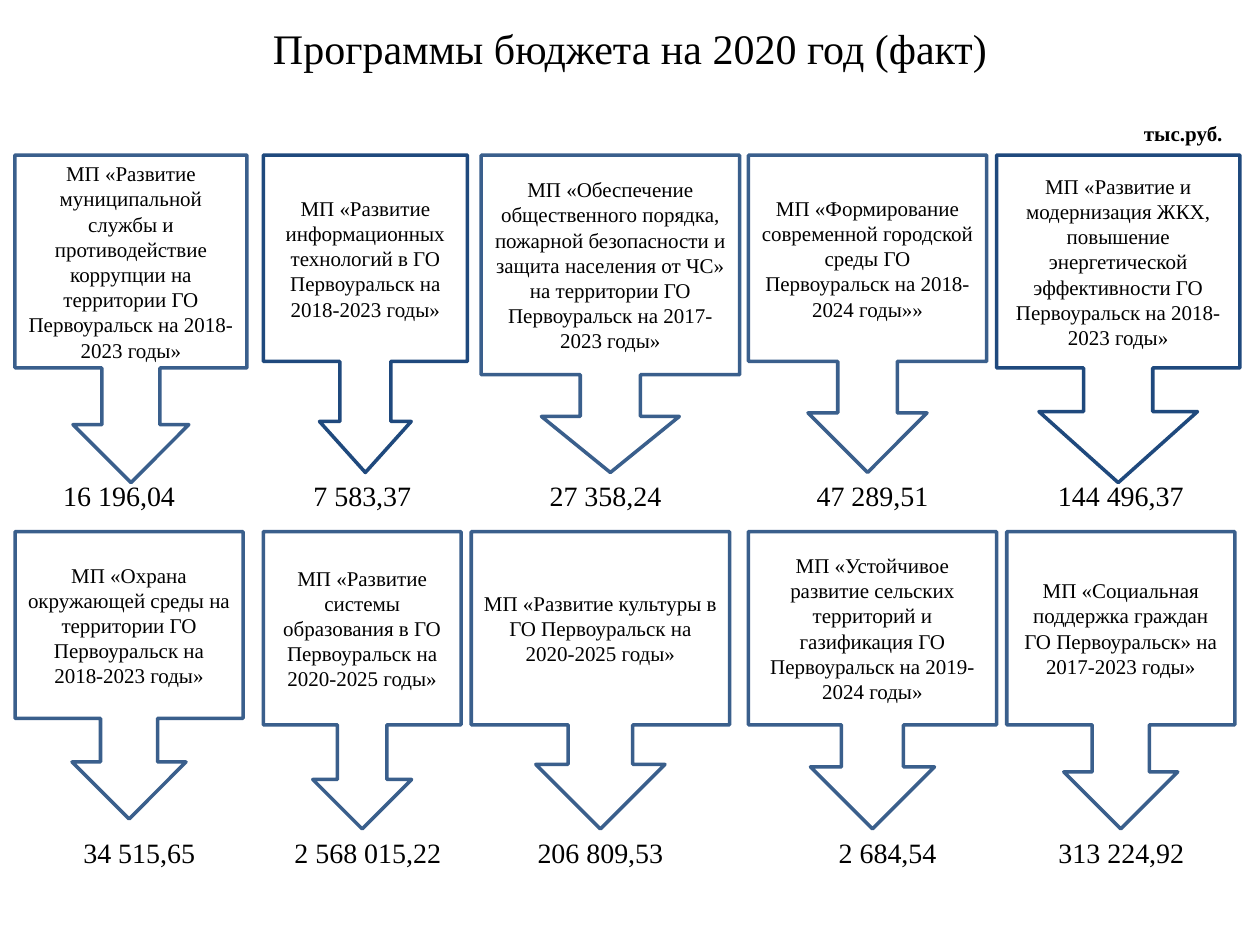
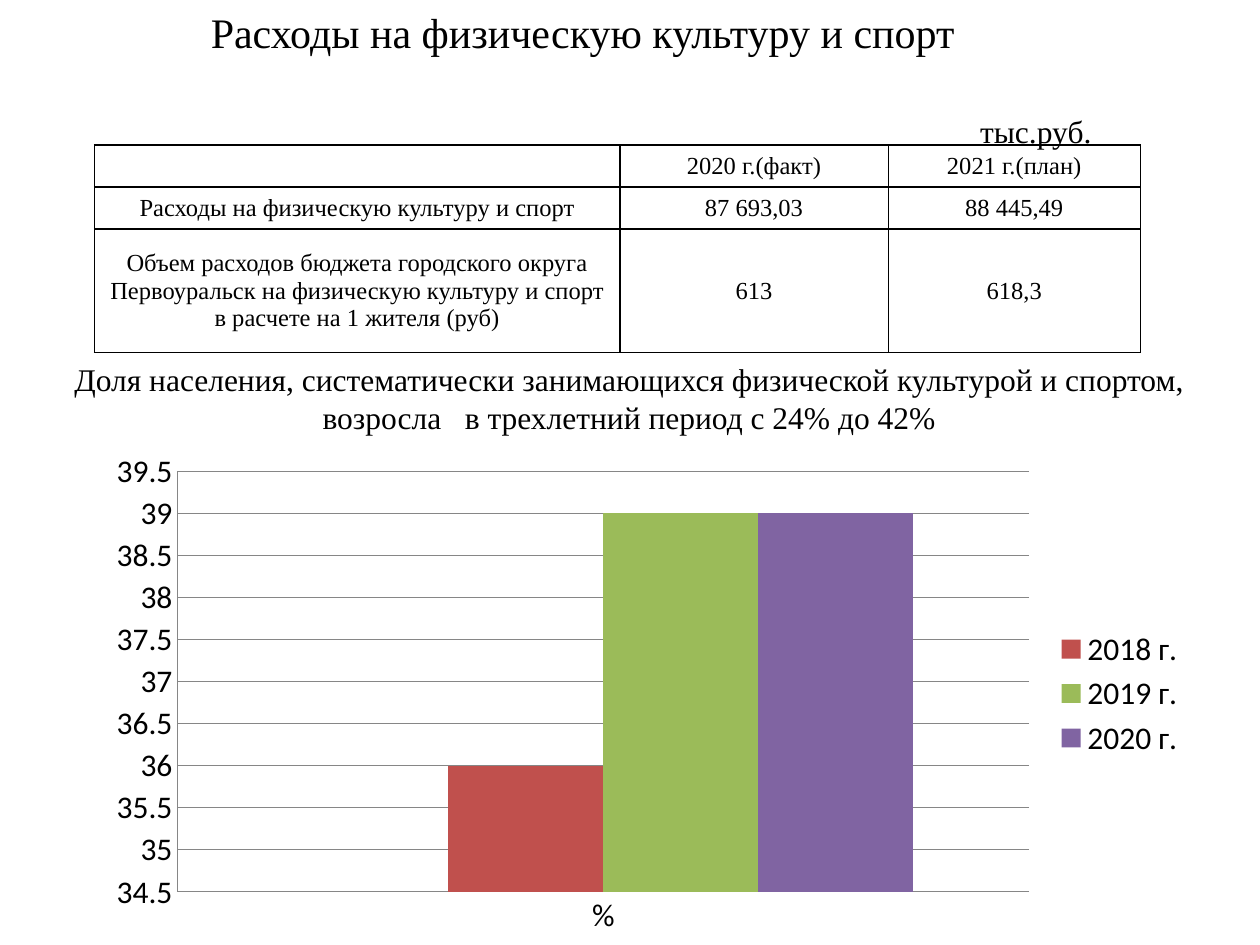
from dataclasses import dataclass

from lxml.etree import SubElement
from pptx import Presentation
from pptx.chart.data import CategoryChartData
from pptx.dml.color import RGBColor as RGB
from pptx.enum.chart import XL_CHART_TYPE as CT, XL_LEGEND_POSITION as LP, XL_TICK_MARK as TM
from pptx.enum.shapes import MSO_SHAPE as SHAPE
from pptx.enum.text import MSO_ANCHOR as ANCHOR, MSO_AUTO_SIZE as AUTO, PP_ALIGN as AL
from pptx.oxml.ns import qn
from pptx.util import Pt


@dataclass(frozen=True)
class Theme:
    font: str = "Times New Roman"
    chart_font: str = "Calibri"
    ink: str = "000000"
    outline: str = "3A5F8C"
    dark_outline: str = "1F497D"
    grid: str = "868686"
    series: tuple = ("4F81BD", "C0504D", "9BBB59", "8064A2")
    title: int = 24
    lead: int = 18
    amount: int = 16
    cell: int = 14
    label: int = 12
    border: int = 1
    callout_line: int = 2


T = Theme()

DEFAULT_ADJ = (0.25, 0.25, 0.25, 0.65)

PROGRAM_ROWS = [
    {"top": 88.6, "amount_top": 270, "programs": [
        ("МП «Развитие муниципальной службы и противодействие коррупции на территории ГО "
         "Первоуральск на 2018-2023 годы»",
         (8.6, 132.5, 187.2), DEFAULT_ADJ, T.outline, "16 196,04", (0, 136.1)),
        ("МП «Развитие информационных технологий в ГО Первоуральск на 2018-2023 годы»",
         (150.5, 116.6, 181.4), (0.25, 0.225, 0.25, 0.65), T.dark_outline,
         "7 583,37", (139, 136.1)),
        ("МП «Обеспечение общественного порядка, пожарной безопасности и защита населения "
         "от ЧС» на территории ГО Первоуральск на 2017-2023 годы»",
         (275, 147.6, 181.4), (0.233, 0.267, 0.217, 0.692), T.outline,
         "27 358,24", (280.8, 130.3)),
        ("МП «Формирование современной городской среды ГО Первоуральск на 2018-2024 годы»»",
         (427.7, 136.1, 181.4), DEFAULT_ADJ, T.outline, "47 289,51", (433.4, 130.3)),
        ("МП «Развитие и модернизация ЖКХ, повышение энергетической эффективности ГО "
         "Первоуральск на 2018-2023 годы»",
         (569.5, 139, 187.2), (0.284, 0.326, 0.292, 0.65), T.dark_outline,
         "144 496,37", (575.3, 130.3)),
    ]},
    {"top": 303.8, "amount_top": 473.8, "programs": [
        ("МП «Охрана окружающей среды на территории ГО Первоуральск на 2018-2023 годы»",
         (8.6, 130.3, 164.2), DEFAULT_ADJ, T.outline, "34 515,65", (14.4, 130.3)),
        ("МП «Развитие системы образования в ГО Первоуральск на 2020-2025 годы»",
         (150.5, 113, 169.9), DEFAULT_ADJ, T.outline, "2 568 015,22", (156.2, 108)),
        ("МП «Развитие культуры в ГО Первоуральск на 2020-2025 годы»",
         (269.3, 147.6, 169.9), DEFAULT_ADJ, T.outline, "206 809,53", (286.6, 113)),
        ("МП «Устойчивое развитие сельских территорий и газификация ГО Первоуральск на "
         "2019-2024 годы»",
         (427.7, 141.8, 169.9), DEFAULT_ADJ, T.outline, "2 684,54", (450.7, 113)),
        ("МП «Социальная поддержка граждан ГО Первоуральск» на 2017-2023 годы»",
         (575.3, 130.3, 169.9), DEFAULT_ADJ, T.outline, "313 224,92", (586.8, 108)),
    ]},
]

SPORT_COSTS = [
    ("", "2020 г.(факт)", "2021 г.(план)"),
    ("Расходы на физическую культуру и спорт", "87 693,03", "88 445,49"),
    ("Объем расходов бюджета городского округа Первоуральск на физическую культуру и спорт "
     "в расчете на 1 жителя (руб)", "613", "618,3"),
]

SPORT_SHARE = [("Series 1", None), ("2018 г.", 36), ("2019 г.", 39), ("2020 г.", 39)]


def apply(obj, **values):
    for name, value in values.items():
        setattr(obj, name, value)


def box(*lengths):
    return [Pt(v) for v in lengths]


def style_font(font, size, name=T.font, bold=False):
    apply(font, name=name, size=Pt(size), bold=bold)
    font.color.rgb = RGB.from_string(T.ink)


def write(tf, text, size, align=AL.CENTER, bold=False):
    p = tf.paragraphs[0]
    p.alignment = align
    if text:
        r = p.add_run()
        r.text = text
        style_font(r.font, size, bold=bold)
    else:
        SubElement(p._p, qn("a:endParaRPr"), sz=str(size * 100))


def add_text(s, text, at, size, **options):
    tf = s.shapes.add_textbox(*box(*at)).text_frame
    apply(tf, word_wrap=True, auto_size=AUTO.SHAPE_TO_FIT_TEXT)
    write(tf, text, size, **options)


def add_callout(s, text, at, adjustments, color):
    sp = s.shapes.add_shape(SHAPE.DOWN_ARROW_CALLOUT, *box(*at))
    for i, value in enumerate(adjustments):
        sp.adjustments[i] = value
    sp.shadow.inherit = False
    sp.fill.background()
    sp.line.color.rgb = RGB.from_string(color)
    sp.line.width = Pt(T.callout_line)
    apply(sp.text_frame, word_wrap=True, vertical_anchor=ANCHOR.MIDDLE)
    write(sp.text_frame, text, T.label)


def add_borders(cell):
    tc_pr = cell._tc.get_or_add_tcPr()
    for i, side in enumerate(("lnL", "lnR", "lnT", "lnB")):
        ln = tc_pr.makeelement(qn(f"a:{side}"), {"w": str(Pt(T.border))})
        fill = SubElement(ln, qn("a:solidFill"))
        SubElement(fill, qn("a:srgbClr"), val=T.ink)
        tc_pr.insert(i, ln)


def add_table(s, rows, at, widths, heights):
    table = s.shapes.add_table(len(rows), len(widths), *box(*at)).table
    apply(table, first_row=False, horz_banding=False)
    for column, width in zip(table.columns, widths):
        column.width = Pt(width)
    for row, height, texts in zip(table.rows, heights, rows):
        row.height = Pt(height)
        for cell, text in zip(row.cells, texts):
            cell.fill.background()
            cell.vertical_anchor = ANCHOR.MIDDLE
            write(cell.text_frame, text, T.cell)
            add_borders(cell)


def hide_legend_entry(legend, index):
    entry = legend._element.makeelement(qn("c:legendEntry"))
    SubElement(entry, qn("c:idx"), val=str(index))
    SubElement(entry, qn("c:delete"), val="1")
    legend._element.find(qn("c:legendPos")).addnext(entry)


def add_column_chart(s, category, series, at):
    data = CategoryChartData()
    data.categories = [category]
    for name, value in series:
        data.add_series(name, [value])
    chart = s.shapes.add_chart(CT.COLUMN_CLUSTERED, *box(*at), data).chart
    apply(chart, has_title=False, has_legend=True)
    style_font(chart.font, T.lead, T.chart_font)
    apply(chart.legend, position=LP.RIGHT, include_in_layout=False)
    hide_legend_entry(chart.legend, 0)

    plot = chart.plots[0]
    apply(plot, gap_width=150, vary_by_categories=False)
    for ser, color in zip(plot.series, T.series):
        ser.invert_if_negative = False
        ser.format.fill.solid()
        ser.format.fill.fore_color.rgb = RGB.from_string(color)

    values = chart.value_axis
    apply(values, minimum_scale=34.5, maximum_scale=39.5, major_unit=0.5,
          has_major_gridlines=True)
    apply(values.tick_labels, number_format="General", number_format_is_linked=False)
    for axis in (values, chart.category_axis):
        apply(axis, major_tick_mark=TM.NONE, minor_tick_mark=TM.NONE)
    for part in (values, chart.category_axis, values.major_gridlines):
        part.format.line.color.rgb = RGB.from_string(T.grid)


def add_slide(prs, title, title_at):
    s = prs.slides.add_slide(prs.slide_layouts[6])
    add_text(s, title, title_at, T.title)
    return s


def build_programs(prs):
    s = add_slide(prs, "Программы бюджета на 2020 год (факт)", (144.7, 9.4, 430.6, 36))
    add_text(s, "тыс.руб.", (646.6, 65.5, 73.4, 21.6), T.label, align=AL.LEFT, bold=True)
    for row in PROGRAM_ROWS:
        for text, (left, width, height), adj, color, amount, (x, w) in row["programs"]:
            add_callout(s, text, (left, row["top"], width, height), adj, color)
            add_text(s, amount, (x, row["amount_top"], w, 26.6), T.amount)


def build_sport(prs):
    s = add_slide(prs, "Расходы на физическую культуру и спорт", (0, 0, 666, 36))
    add_table(s, SPORT_COSTS, (54, 82.8, 597.6, 118.6), (300.2, 153.4, 144), (24, 24, 70.6))
    add_text(s, "тыс.руб.", (553, 60.5, 141.8, 28.8), T.lead, align=AL.LEFT)
    add_text(s, "Доля населения, систематически занимающихся физической культурой и спортом, "
                "возросла   в трехлетний период с 24% до 42%", (19.4, 202.3, 680.4, 51), T.lead)
    add_column_chart(s, "%", SPORT_SHARE, (54, 252.7, 630.7, 287.3))


def main():
    prs = Presentation()
    apply(prs, slide_width=Pt(720), slide_height=Pt(540))
    build_programs(prs)
    build_sport(prs)
    prs.save("out.pptx")


if __name__ == "__main__":
    main()
